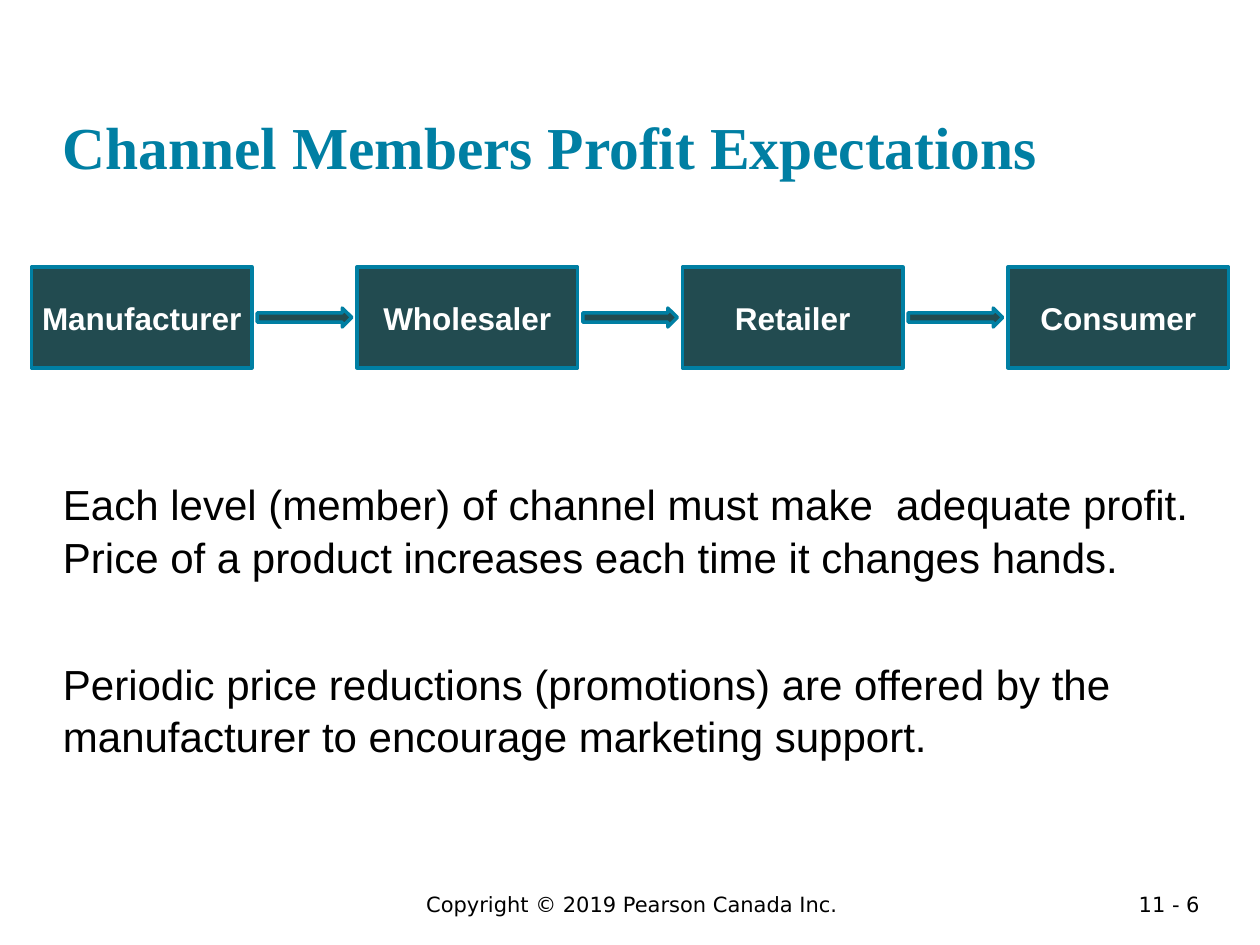
from pptx import Presentation
from pptx.dml.color import RGBColor
from pptx.enum.shapes import MSO_SHAPE
from pptx.enum.text import MSO_ANCHOR, PP_ALIGN
from pptx.util import Inches, Pt

RECTANGLE = MSO_SHAPE.RECTANGLE
RIGHT_ARROW = MSO_SHAPE.RIGHT_ARROW
TOP, MIDDLE, BOTTOM = MSO_ANCHOR.TOP, MSO_ANCHOR.MIDDLE, MSO_ANCHOR.BOTTOM
LEFT, CENTER, RIGHT = PP_ALIGN.LEFT, PP_ALIGN.CENTER, PP_ALIGN.RIGHT

TEAL, DARK, BLACK, WHITE = "007FA3", "224B50", "000000", "FFFFFF"

MEMBERS = ["Manufacturer", "Wholesaler", "Retailer", "Consumer"]
POINTS = [
    "Each level (member) of channel must make  adequate profit. "
    "Price of a product increases each time it changes hands.",
    "Periodic price reductions (promotions) are offered by the "
    "manufacturer to encourage marketing support.",
]


def color(value):
    return RGBColor.from_string(value)


def write(shape, lines, font, size, ink, bold=False, align=LEFT, anchor=TOP,
          inset=(0, 0), gap=0, spacing=1.0):
    frame = shape.text_frame
    frame.word_wrap = True
    frame.vertical_anchor = anchor
    frame.margin_left = frame.margin_right = Inches(inset[0])
    frame.margin_top = frame.margin_bottom = Inches(inset[1])
    frame.text = "\n".join(lines)
    for index, paragraph in enumerate(frame.paragraphs):
        paragraph.alignment = align
        paragraph.line_spacing = spacing
        if index:
            paragraph.space_before = Pt(gap)
        for run in paragraph.runs:
            run.font.name = font
            run.font.size = Pt(size)
            run.font.bold = bold
            run.font.color.rgb = color(ink)


def add_block(slide, preset, left, top, width, height):
    block = slide.shapes.add_shape(
        preset, Inches(left), Inches(top), Inches(width), Inches(height))
    block.shadow.inherit = False
    block.fill.solid()
    block.fill.fore_color.rgb = color(DARK)
    block.line.color.rgb = color(TEAL)
    block.line.width = Pt(2)
    return block


def add_title(slide, left, top, width, height):
    title = slide.shapes.add_textbox(
        Inches(left), Inches(top), Inches(width), Inches(height))
    write(title, ["Channel Members Profit Expectations"],
          "Times New Roman", 34, TEAL, bold=True, anchor=BOTTOM)


def add_channel(slide, left, top, width, height):
    member_width, arrow_width, arrow_height = 1.75, 0.75, 0.15
    pitch = (width - member_width) / (len(MEMBERS) - 1)
    arrow_offset = (pitch + member_width - arrow_width) / 2
    arrow_top = top + (height - arrow_height) / 2
    for index, name in enumerate(MEMBERS):
        member_left = left + index * pitch
        member = add_block(slide, RECTANGLE, member_left, top, member_width, height)
        write(member, [name], "Arial", 18, WHITE, bold=True,
              align=CENTER, anchor=MIDDLE)
        if index < len(MEMBERS) - 1:
            add_block(slide, RIGHT_ARROW, member_left + arrow_offset, arrow_top,
                      arrow_width, arrow_height)


def add_points(slide, left, top, width, height):
    points = slide.shapes.add_textbox(
        Inches(left), Inches(top), Inches(width), Inches(height))
    write(points, POINTS, "Arial", 24, BLACK, gap=42, spacing=1.05)


def add_footer(slide, left, top, width, height, text, align):
    footer = slide.shapes.add_textbox(
        Inches(left), Inches(top), Inches(width), Inches(height))
    write(footer, [text], "DejaVu Sans", 12, BLACK, align=align, inset=(0.1, 0.05))


def main():
    deck = Presentation()
    deck.slide_width = Inches(10)
    deck.slide_height = Inches(7.5)
    slide = deck.slides.add_slide(deck.slide_layouts[6])
    add_footer(slide, 1.64, 7.03, 6.75, 0.3,
               "Copyright © 2019 Pearson Canada Inc.", CENTER)
    add_footer(slide, 8.62, 7.03, 1, 0.22, "11 - 6", RIGHT)
    add_title(slide, 0.5, 0.24, 9, 1.2)
    add_channel(slide, 0.25, 2.12, 9.5, 0.8)
    add_points(slide, 0.5, 3.78, 9, 2.49)
    deck.save("out.pptx")


if __name__ == "__main__":
    main()
